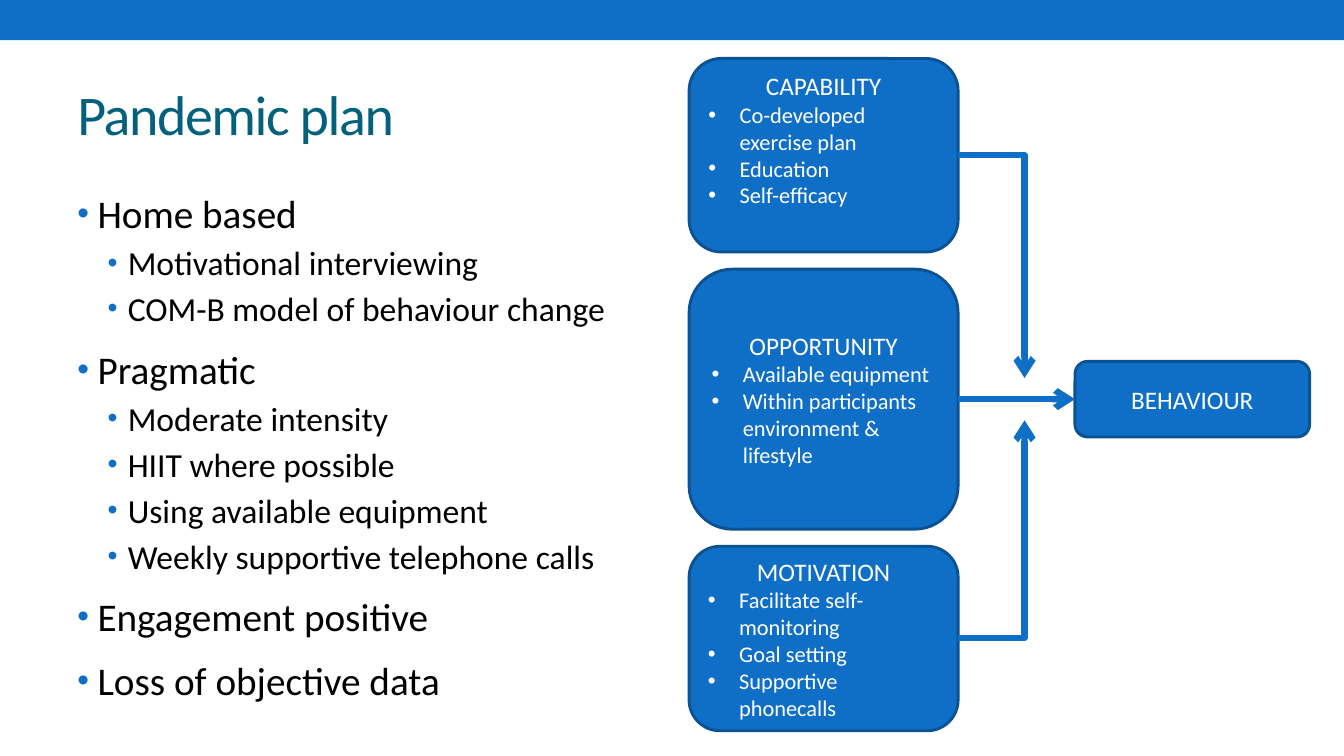
"""Build the Pandemic plan slide with its COM-B behaviour diagram."""
from lxml.etree import SubElement
from pptx import Presentation
from pptx.dml.color import RGBColor
from pptx.enum.shapes import MSO_CONNECTOR, MSO_SHAPE
from pptx.enum.text import MSO_ANCHOR, PP_ALIGN
from pptx.oxml.ns import qn
from pptx.util import Inches, Pt

BLUE, EDGE, TEAL, WHITE, BLACK = "0F6FC6", "0B5292", "04617B", "FFFFFF", "000000"
W, H, LEFT = 13.34, 7.5, 0.67
BOX_X, BOX_W, BOX_TOP, GAP = 6.84, 2.67, 0.58, 0.17
ELBOW_X = 10.17


def rgb(value):
    return RGBColor.from_string(value)


def write(tf, text, size, color, bullet=None, before=0, align=PP_ALIGN.LEFT):
    """Add a paragraph; bullet is (left, hanging, colour, size percent)."""
    p = tf.paragraphs[0] if not tf.text else tf.add_paragraph()
    p.alignment, p.space_before = align, Pt(before)
    r = p.add_run()
    r.text = text
    for name, value in {"name": "Calibri", "size": Pt(size)}.items():
        setattr(r.font, name, value)
    r.font.color.rgb = rgb(color)
    if bullet:
        left, hanging, tint, percent = bullet
        pPr = p._p.get_or_add_pPr()
        pPr.set("marL", str(Inches(left)))
        pPr.set("indent", str(-Inches(hanging)))
        SubElement(SubElement(pPr, qn("a:buClr")), qn("a:srgbClr")).set("val", tint)
        SubElement(pPr, qn("a:buSzPct")).set("val", str(percent * 1000))
        SubElement(pPr, qn("a:buFont")).set("typeface", "Arial")
        SubElement(pPr, qn("a:buChar")).set("char", "•")
    return r


prs = Presentation()
prs.slide_width, prs.slide_height = Inches(W), Inches(H)
s = prs.slides.add_slide(prs.slide_layouts[6])

band = s.shapes.add_shape(MSO_SHAPE.RECTANGLE, 0, 0, prs.slide_width, Inches(0.4))
band.shadow.inherit = False
band.fill.solid()
band.fill.fore_color.rgb = rgb(BLUE)
band.line.fill.background()

title = s.shapes.add_textbox(Inches(LEFT), Inches(0.58), Inches(W - 2 * LEFT), Inches(1.08))
tf = title.text_frame
tf.word_wrap, tf.vertical_anchor = True, MSO_ANCHOR.MIDDLE
r = write(tf, "Pandemic plan", 40, TEAL)
r.font._element.set("spc", "-100")

plan = [
    ("Home based", ["Motivational interviewing", "COM-B model of behaviour change"]),
    ("Pragmatic", ["Moderate intensity", "HIIT where possible",
                   "Using available equipment", "Weekly supportive telephone calls"]),
    ("Engagement positive", []),
    ("Loss of objective data", []),
]
body = s.shapes.add_textbox(Inches(LEFT), Inches(1.83), Inches(5.89), Inches(5.16))
tf = body.text_frame
tf.word_wrap = True
for heading, points in plan:
    write(tf, heading, 28, BLACK, (0.2, 0.2, BLUE, 85), 12)
    for point in points:
        write(tf, point, 24, BLACK, (0.5, 0.2, BLUE, 85), 4)

causes = [
    ("CAPABILITY", 1.92, 0.36, ["Co-developed exercise plan", "Education", "Self-efficacy"]),
    ("OPPORTUNITY", 2.58, 0.05, ["Available equipment",
                                 "Within participants environment & lifestyle"]),
    ("MOTIVATION", 1.83, 0.05, ["Facilitate self-monitoring", "Goal setting",
                                "Supportive phonecalls"]),
]
boxes, y = [], BOX_TOP
for name, height, bottom, points in causes:
    boxes.append((name, BOX_X, y, BOX_W, height, bottom, points))
    y += height + GAP
boxes.append(("BEHAVIOUR", 10.67, 3.585, 2.33, 0.75, 0.05, []))

shapes = {}
for name, x, y, width, height, bottom, points in boxes:
    sp = s.shapes.add_shape(MSO_SHAPE.ROUNDED_RECTANGLE, Inches(x), Inches(y),
                            Inches(width), Inches(height))
    sp.shadow.inherit = False
    sp.fill.solid()
    sp.fill.fore_color.rgb = rgb(BLUE)
    sp.line.color.rgb, sp.line.width = rgb(EDGE), Pt(2.08)
    tf = sp.text_frame
    for key, value in {"word_wrap": True, "vertical_anchor": MSO_ANCHOR.MIDDLE,
                       "margin_bottom": Inches(bottom)}.items():
        setattr(tf, key, value)
    write(tf, name, 18, WHITE, align=PP_ALIGN.CENTER)
    for point in points:
        write(tf, point, 16, WHITE, (0.31, 0.31, WHITE, 100))
    shapes[name] = sp

right = BOX_X + BOX_W
arrows = [
    (MSO_CONNECTOR.ELBOW, 1.54, ELBOW_X, 3.75),
    (MSO_CONNECTOR.ELBOW, 6.33, ELBOW_X, 4.17),
    (MSO_CONNECTOR.STRAIGHT, 3.96, 10.67, 3.96),
]
for kind, y1, x2, y2 in arrows:
    c = s.shapes.add_connector(kind, Inches(right), Inches(y1), Inches(x2), Inches(y2))
    c.line.color.rgb, c.line.width = rgb(BLUE), Pt(4.5)
    SubElement(c.line._get_or_add_ln(), qn("a:tailEnd")).set("type", "arrow")
    SubElement(c._element.spPr, qn("a:effectLst"))
    if kind == MSO_CONNECTOR.ELBOW:
        c._element.spPr.find(qn("a:prstGeom")).set("prst", "bentConnector2")
    else:
        c.begin_connect(shapes["OPPORTUNITY"], 3)
        c.end_connect(shapes["BEHAVIOUR"], 1)

prs.save("out.pptx")
